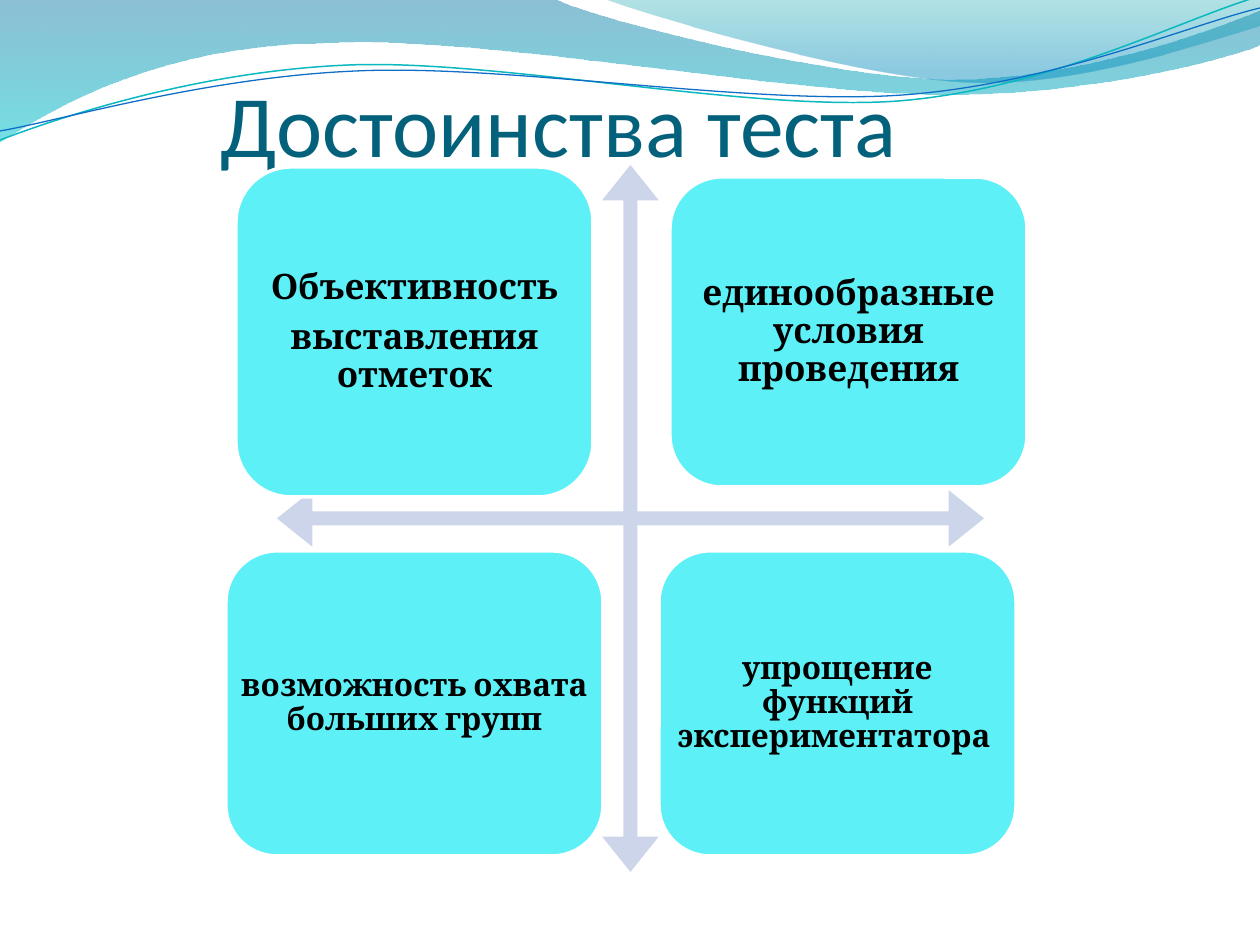
"""Build the slide on the advantages of a test: four boxes around a crossed arrow."""
from dataclasses import dataclass

import pptx
import pptx.dml.color
import pptx.enum.shapes
import pptx.enum.text
import pptx.oxml
import pptx.oxml.ns
import pptx.shapes.autoshape
import pptx.slide
import pptx.util

RGB = pptx.dml.color.RGBColor
SHAPES = pptx.enum.shapes.MSO_SHAPE
ANCHOR = pptx.enum.text.MSO_ANCHOR
ALIGN = pptx.enum.text.PP_ALIGN

EMU_PER_PX = 914400 / 126
NAMESPACE = pptx.oxml.ns.nsdecls("a")
TITLE_COLOR = RGB(0x04, 0x61, 0x7B)
BOX_COLOR = RGB(0x5E, 0xF0, 0xF7)
ARROW_COLOR = RGB(0xCC, 0xD5, 0xEA)
WHITE = RGB(0xFF, 0xFF, 0xFF)
BLACK = RGB(0, 0, 0)
DEEP_BLUE = RGB(0x00, 0x74, 0xA1)
AQUA = RGB(0x00, 0xC6, 0xCF)
SEA_GREEN = RGB(0x00, 0xA1, 0xA9)
SKY_BLUE = RGB(0x00, 0x8B, 0xBF)
TEAL = RGB(0x0A, 0xB8, 0xBF)
ROYAL_BLUE = RGB(0x0F, 0x6F, 0xC6)

Point = tuple[int, int]


@dataclass(frozen=True)
class Stop:
    position: float
    color: RGB
    opacity: int


@dataclass(frozen=True)
class Wave:
    """A path whose segments have one point (line) or three (Bezier curve)."""
    start: Point
    segments: tuple[tuple[Point, ...], ...]


@dataclass(frozen=True)
class Band:
    wave: Wave
    stops: tuple[Stop, Stop]


@dataclass(frozen=True)
class Strand:
    wave: Wave
    color: RGB
    width: float


@dataclass(frozen=True)
class Advantage:
    frame: tuple[int, int, int, int]
    paragraphs: tuple[str, ...]
    size: int
    margin: int


BANDS = (
    Band(Wave((0, 0), (
        ((554, -1),),
        ((600, 21), (837, 79), (955, 79)),
        ((1074, 79), (1207, 33), (1260, 11)),
        ((1261, 45),),
        ((1239, 55), (1096, 96), (940, 94)),
        ((784, 94), (481, 35), (324, 43)),
        ((163, 45), (58, 105), (-1, 142)))),
        (Stop(0, DEEP_BLUE, 45), Stop(1, AQUA, 55))),
    Band(Wave((604, -1), (
        ((641, 14), (859, 78), (969, 82)),
        ((1079, 87), (1211, 40), (1260, 26)),
        ((1260, 0),))),
        (Stop(0, SEA_GREEN, 30), Stop(0.8, SKY_BLUE, 45))),
)
STRANDS = (
    Strand(Wave((0, 140), (
        ((60, 117), (199, 71), (349, 65)),
        ((498, 59), (747, 112), (898, 101)),
        ((1049, 89), (1182, 19), (1257, -3)))), TEAL, 0.85),
    Strand(Wave((0, 131), (
        ((59, 121), (207, 77), (357, 71)),
        ((508, 64), (752, 106), (903, 95)),
        ((1053, 84), (1186, 26), (1260, 8)))), ROYAL_BLUE, 0.75),
)
ADVANTAGES = (
    Advantage((236, 167, 357, 330), ("Объективность", "выставления отметок"), 20, 10),
    Advantage((670, 177, 357, 310), ("единообразные условия проведения",), 20, 10),
    Advantage((226, 551, 377, 305), ("возможность охвата больших групп",), 18, 9),
    Advantage((659, 551, 357, 305), ("упрощение функций экспериментатора ",), 18, 9),
)


def px(length: int) -> int:
    return round(length * EMU_PER_PX)


def apply(target: object, values: dict) -> None:
    for name, value in values.items():
        setattr(target, name, value)


def draw_wave(slide: pptx.slide.Slide, wave: Wave, closed: bool) -> pptx.shapes.autoshape.Shape:
    builder = slide.shapes.build_freeform(*map(px, wave.start), scale=1.0)
    builder.add_line_segments(
        [(px(x), px(y)) for segment in wave.segments for x, y in segment], close=closed)
    shape = builder.convert_to_shape()
    shape.shadow.inherit = False
    steps = iter(list(shape.element.spPr.iter(pptx.oxml.ns.qn("a:lnTo"))))
    for segment in wave.segments:
        lines = [next(steps) for _ in segment]
        if len(lines) == 3:
            curve = pptx.oxml.parse_xml(f"<a:cubicBezTo {NAMESPACE}/>")
            lines[0].addprevious(curve)
            for line in lines:
                curve.append(line[0])
                line.getparent().remove(line)
    return shape


def draw_band(slide: pptx.slide.Slide, band: Band) -> None:
    shape = draw_wave(slide, band.wave, True)
    shape.line.fill.background()
    shape.fill.gradient()
    shape.fill.gradient_angle = 270
    for gradient_stop, stop in zip(shape.fill.gradient_stops, band.stops):
        gradient_stop.position = stop.position
        gradient_stop.color.rgb = stop.color
    colors = shape.element.spPr.iter(pptx.oxml.ns.qn("a:srgbClr"))
    for color, stop in zip(colors, band.stops):
        color.append(pptx.oxml.parse_xml(
            f'<a:alpha {NAMESPACE} val="{stop.opacity * 1000}"/>'))


def draw_strand(slide: pptx.slide.Slide, strand: Strand) -> None:
    shape = draw_wave(slide, strand.wave, False)
    shape.fill.background()
    shape.line.color.rgb = strand.color
    shape.line.width = pptx.util.Pt(strand.width)


def draw_shape(slide: pptx.slide.Slide, kind: SHAPES, frame: tuple[int, ...],
               color: RGB) -> pptx.shapes.autoshape.Shape:
    shape = slide.shapes.add_shape(kind, *map(px, frame))
    shape.shadow.inherit = False
    shape.fill.solid()
    shape.fill.fore_color.rgb = color
    shape.line.fill.background()
    return shape


def draw_text(slide: pptx.slide.Slide, frame: tuple[int, ...], paragraphs: tuple[str, ...],
              color: RGB, frame_format: dict, paragraph_format: dict, font_format: dict) -> None:
    text_frame = slide.shapes.add_textbox(*map(px, frame)).text_frame
    apply(text_frame, {"word_wrap": True, **frame_format})
    text_frame.text = "\n".join(paragraphs)
    for paragraph in text_frame.paragraphs:
        apply(paragraph, paragraph_format)
        apply(paragraph.runs[0].font, font_format)
        paragraph.runs[0].font.color.rgb = color


def draw_advantage(slide: pptx.slide.Slide, advantage: Advantage) -> None:
    box = draw_shape(slide, SHAPES.ROUNDED_RECTANGLE, advantage.frame, BOX_COLOR)
    box.line.color.rgb = WHITE
    box.line.width = pptx.util.Pt(2)
    margins = {f"margin_{side}": px(advantage.margin) for side in ("left", "top", "right", "bottom")}
    draw_text(slide, advantage.frame, advantage.paragraphs, BLACK,
              {"vertical_anchor": ANCHOR.MIDDLE, **margins},
              {"alignment": ALIGN.CENTER, "line_spacing": 0.9,
               "space_after": pptx.util.Pt(0.35 * advantage.size)},
              {"name": "Cambria", "size": pptx.util.Pt(advantage.size), "bold": True})


def main() -> None:
    deck = pptx.Presentation()
    apply(deck, {"slide_width": px(1260), "slide_height": px(945)})
    slide = deck.slides.add_slide(deck.slide_layouts[6])
    for band in BANDS:
        draw_band(slide, band)
    for strand in STRANDS:
        draw_strand(slide, strand)
    draw_text(slide, (63, 37, 1134, 138), ("Достоинства теста",), TITLE_COLOR,
              {"vertical_anchor": ANCHOR.BOTTOM, "margin_left": px(158), "margin_top": px(6),
               "margin_right": 0, "margin_bottom": 0},
              {}, {"name": "Calibri", "size": pptx.util.Pt(50)})
    cross = draw_shape(slide, SHAPES.QUAD_ARROW, (277, 165, 707, 707), ARROW_COLOR)
    for index, ratio in enumerate((0.02, 0.04, 0.05)):
        cross.adjustments[index] = ratio
    for advantage in ADVANTAGES:
        draw_advantage(slide, advantage)
    deck.save("out.pptx")


if __name__ == "__main__":
    main()
